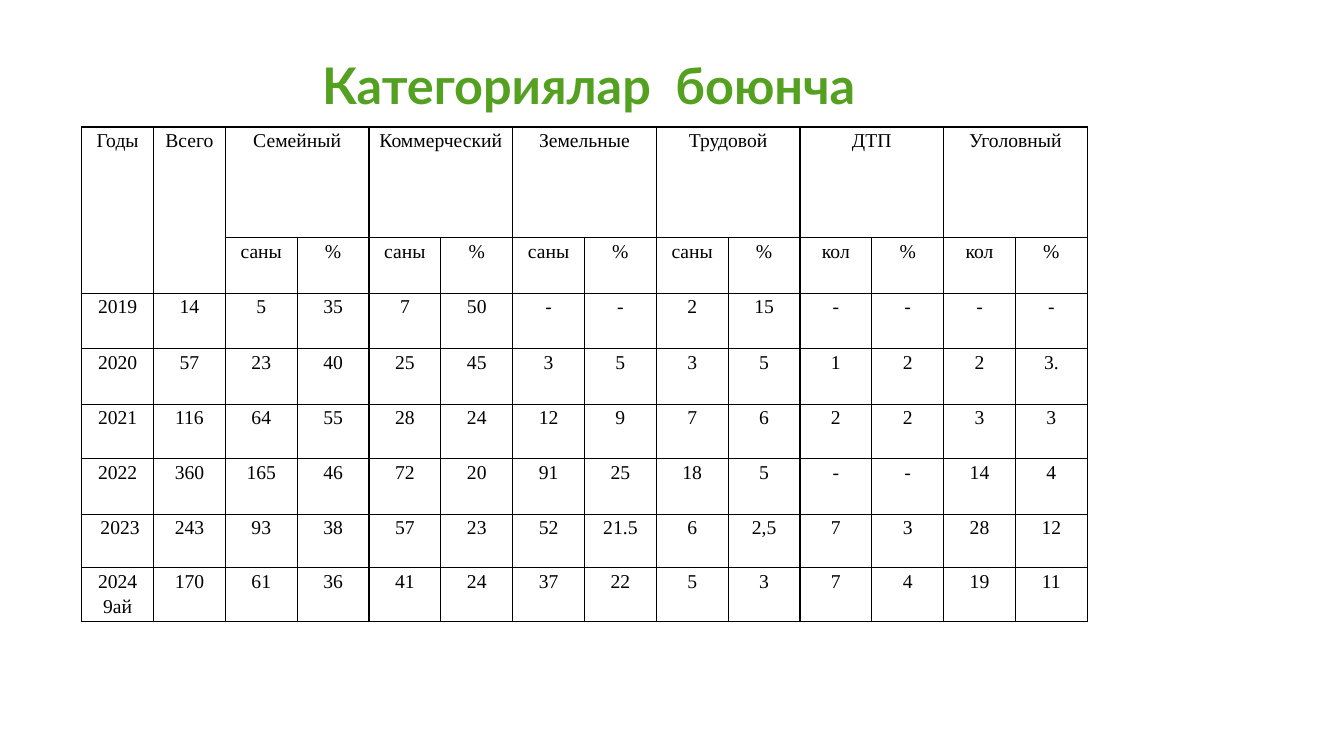
import pptx
import pptx.dml.color
import pptx.enum.text
import pptx.oxml
import pptx.oxml.ns
import pptx.util

Cm, Pt = pptx.util.Cm, pptx.util.Pt
RGBColor = pptx.dml.color.RGBColor
CENTER = pptx.enum.text.PP_ALIGN.CENTER
GREEN = RGBColor(0x54, 0xA0, 0x21)
BLACK = RGBColor(0, 0, 0)

CATEGORIES = ["Семейный", "Коммерческий", "Земельные", "Трудовой", "ДТП", "Уголовный"]
COUNT_LABELS = ["саны"] * 4 + ["кол"] * 2
YEARS = [
    ["2019", "14", "5", "35", "7", "50", "-", "-", "2", "15", "-", "-", "-", "-"],
    ["2020", "57", "23", "40", "25", "45", "3", "5", "3", "5", "1", "2", "2", "3."],
    ["2021", "116", "64", "55", "28", "24", "12", "9", "7", "6", "2", "2", "3", "3"],
    ["2022", "360", "165", "46", "72", "20", "91", "25", "18", "5", "-", "-", "14", "4"],
    [" 2023", "243", "93", "38", "57", "23", "52", "21.5", "6", "2,5", "7", "3", "28", "12"],
    ["2024 9ай", "170", "61", "36", "41", "24", "37", "22", "5", "3", "7", "4", "19", "11"],
]
ROW_HEIGHTS = [2.79, 1.4, 1.4, 1.4, 1.37, 1.4, 1.35, 1.35]
COL_WIDTH = 1.81


def write(p, text, font):
    p.alignment = CENTER
    r = p.add_run()
    r.text = text
    for name, value in font.items():
        setattr(r.font, name, value)
    return r


prs = pptx.Presentation()
prs.slide_width, prs.slide_height = Cm(33.87), Cm(19.05)
s = prs.slides.add_slide(prs.slide_layouts[5])

# Title
title = s.shapes.title
title.left, title.top, title.width, title.height = Cm(2.16), Cm(1.24), Cm(23.11), Cm(2.01)
tf = title.text_frame
frame_format = {
    "word_wrap": True,
    "auto_size": pptx.enum.text.MSO_AUTO_SIZE.NONE,
    "vertical_anchor": pptx.enum.text.MSO_ANCHOR.TOP,
    "margin_left": Cm(2.5),
}
for name, value in frame_format.items():
    setattr(tf, name, value)
r = write(tf.paragraphs[0], "Категориялар  боюнча", {"name": "Lato", "size": Pt(36), "bold": True})
r.font.color.rgb = GREEN

# Table grid
headers = ["Годы", "Всего"]
labels = ["", ""]
for category, count_label in zip(CATEGORIES, COUNT_LABELS):
    headers += [category, ""]
    labels += [count_label, "%"]
rows = [headers, labels] + YEARS
table = s.shapes.add_table(len(rows), len(headers), Cm(2.06), Cm(3.2),
                           Cm(COL_WIDTH * len(headers)), Cm(sum(ROW_HEIGHTS))).table
table.first_row = table.horz_banding = False
for col in table.columns:
    col.width = Cm(COL_WIDTH)
for row, height in zip(table.rows, ROW_HEIGHTS):
    row.height = Cm(height)

# Merged headings
for c in range(2):
    table.cell(0, c).merge(table.cell(1, c))
for c in range(2, len(headers), 2):
    table.cell(0, c).merge(table.cell(0, c + 1))

# Cell text and borders
cell_format = {"margin_left": Cm(0.15), "margin_right": Cm(0.15), "margin_top": 0, "margin_bottom": 0}
for i, values in enumerate(rows):
    for j, text in enumerate(values):
        cell = table.cell(i, j)
        for name, value in cell_format.items():
            setattr(cell, name, value)
        tcPr = cell._tc.get_or_add_tcPr()
        for side in ("lnL", "lnR", "lnT", "lnB"):
            tcPr.append(pptx.oxml.parse_xml(
                f'<a:{side} {pptx.oxml.ns.nsdecls("a")} w="12700"><a:solidFill>'
                f'<a:srgbClr val="{BLACK}"/></a:solidFill></a:{side}>'))
        cell.fill.background()
        if text:
            p = cell.text_frame.paragraphs[0]
            p.line_spacing = 1.15
            r = write(p, text, {"name": "Times New Roman", "size": Pt(14)})
            r.font.color.rgb = BLACK

prs.save("out.pptx")
